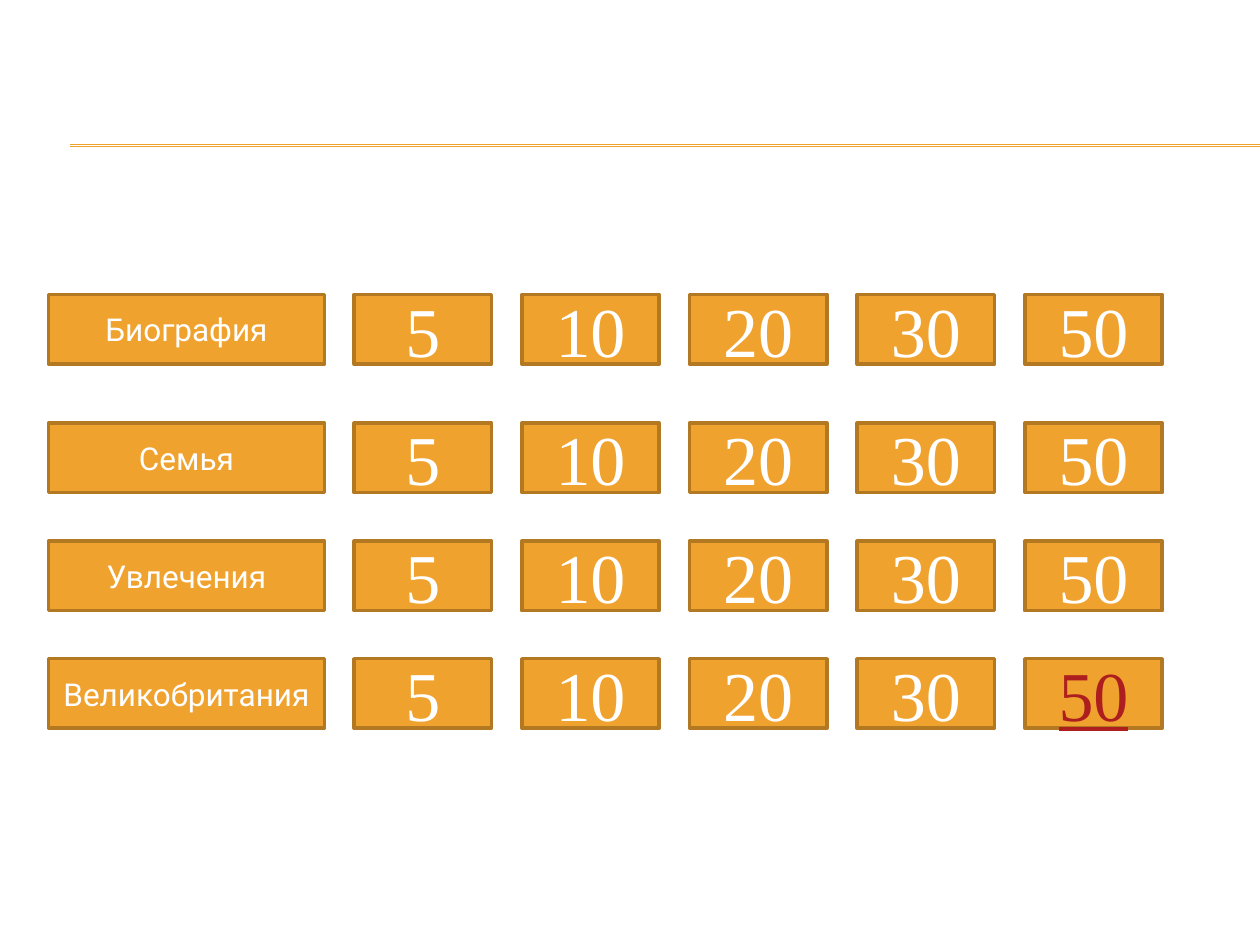
from dataclasses import dataclass

from lxml import etree
from pptx import Presentation
from pptx.dml.color import RGBColor
from pptx.enum.shapes import MSO_CONNECTOR, MSO_SHAPE
from pptx.enum.text import MSO_ANCHOR, PP_ALIGN
from pptx.oxml.ns import qn
from pptx.slide import Slide
from pptx.util import Cm, Pt

STRAIGHT = MSO_CONNECTOR.STRAIGHT
BUTTON = MSO_SHAPE.ACTION_BUTTON_CUSTOM
MIDDLE = MSO_ANCHOR.MIDDLE
CENTER = PP_ALIGN.CENTER

COLORS = {
    "amber": "F0A22E",
    "brown": "B27822",
    "white": "FFFFFF",
    "link": "AD1F1F",
}

# Board layout, in centimetres
PAGE_WIDTH, PAGE_HEIGHT = 25.4, 19.05
RULE_LEFT = 1.42
RULE_TOPS = (2.92, 2.95)
TOPIC_LEFT, TOPIC_WIDTH = 0.98, 5.56
SCORE_LEFT, SCORE_WIDTH, SCORE_STEP = 7.14, 2.77, 3.38
BUTTON_HEIGHT = 1.4

SCORES = (5, 10, 20, 30, 50)


@dataclass(frozen=True)
class Topic:
    name: str
    top: float
    linked_score: int | None = None


@dataclass(frozen=True)
class TextStyle:
    font: str
    size: int
    color: str = "white"
    underline: bool = False


TOPICS = (
    Topic("Биография", 5.94),
    Topic("Семья", 8.53),
    Topic("Увлечения", 10.91),
    Topic("Великобритания", 13.28, linked_score=50),
)

TOPIC_STYLE = TextStyle("Roboto", 18)
SCORE_STYLE = TextStyle("Times New Roman", 40)
LINK_STYLE = TextStyle("Times New Roman", 40, "link", underline=True)


def color(name: str) -> RGBColor:
    return RGBColor.from_string(COLORS[name])


def draw_rule(page: Slide, top: float) -> None:
    rule = page.shapes.add_connector(
        STRAIGHT, Cm(RULE_LEFT), Cm(top), Cm(PAGE_WIDTH), Cm(top)
    )
    rule.line.color.rgb = color("amber")
    rule.line.width = Pt(0.75)
    etree.SubElement(rule._element.spPr, qn("a:effectLst"))


def draw_button(
    page: Slide, left: float, top: float, width: float, text: str, style: TextStyle
) -> None:
    box = page.shapes.add_shape(BUTTON, Cm(left), Cm(top), Cm(width), Cm(BUTTON_HEIGHT))
    box.shadow.inherit = False
    box.fill.solid()
    box.fill.fore_color.rgb = color("amber")
    box.line.color.rgb = color("brown")
    box.line.width = Pt(2)

    frame = box.text_frame
    frame.word_wrap = True
    frame.vertical_anchor = MIDDLE
    para = frame.paragraphs[0]
    para.alignment = CENTER
    span = para.add_run()
    span.text = text
    span.font.name = style.font
    span.font.size = Pt(style.size)
    span.font.color.rgb = color(style.color)
    if style.underline:
        span.font.underline = True


def draw_topic(page: Slide, topic: Topic) -> None:
    draw_button(page, TOPIC_LEFT, topic.top, TOPIC_WIDTH, topic.name, TOPIC_STYLE)
    for column, score in enumerate(SCORES):
        left = SCORE_LEFT + column * SCORE_STEP
        style = LINK_STYLE if score == topic.linked_score else SCORE_STYLE
        draw_button(page, left, topic.top, SCORE_WIDTH, str(score), style)


def main() -> None:
    deck = Presentation()
    deck.slide_width, deck.slide_height = Cm(PAGE_WIDTH), Cm(PAGE_HEIGHT)
    page = deck.slides.add_slide(deck.slide_layouts[6])

    # Double rule under the title area
    for top in RULE_TOPS:
        draw_rule(page, top)

    # Quiz board: one row per topic
    for topic in TOPICS:
        draw_topic(page, topic)

    deck.save("out.pptx")


if __name__ == "__main__":
    main()
